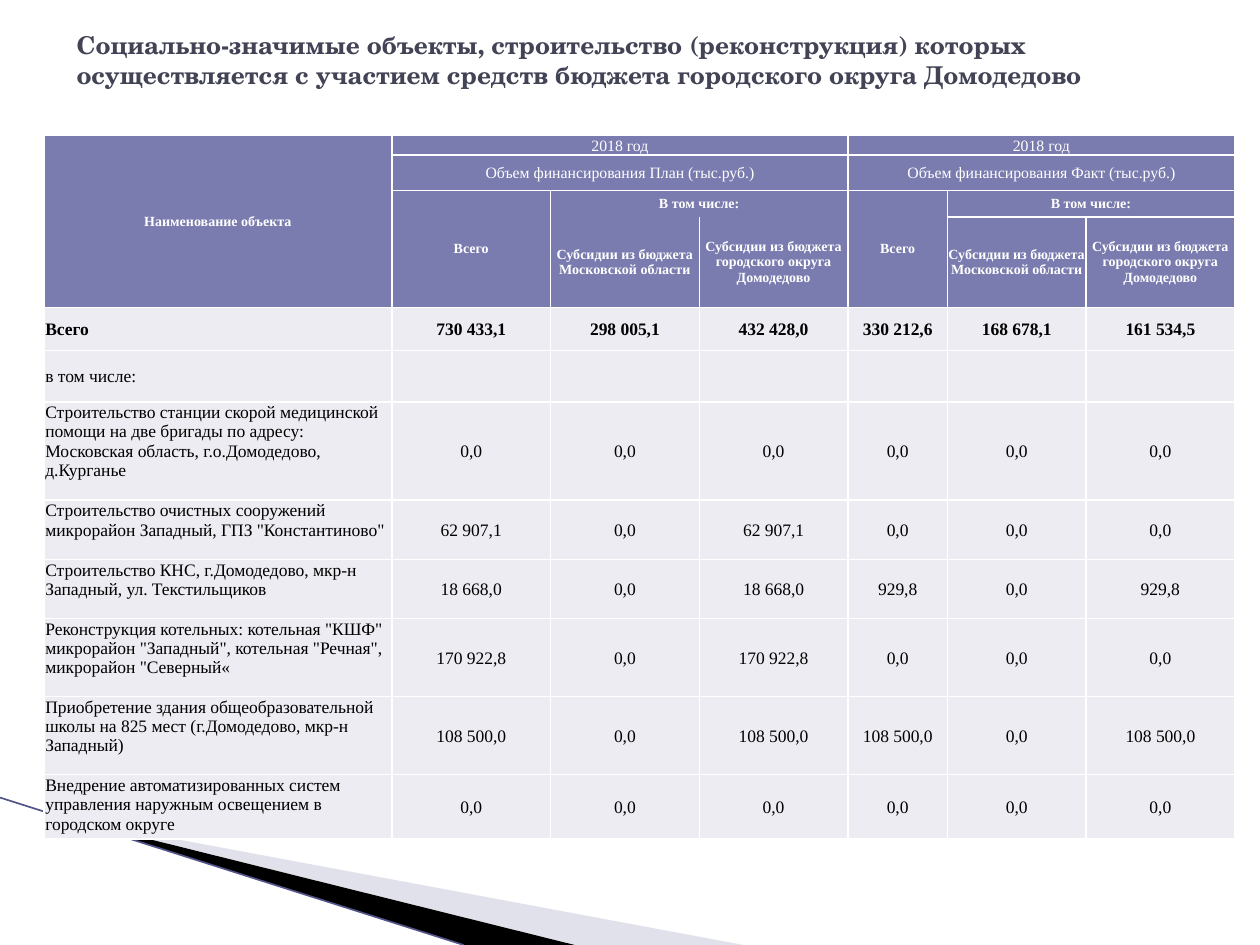
from lxml import etree
from pptx import Presentation
from pptx.dml.color import RGBColor
from pptx.enum.shapes import MSO_CONNECTOR
from pptx.enum.text import MSO_ANCHOR, PP_ALIGN
from pptx.oxml.ns import qn
from pptx.util import Emu, Pt

LEFT, CENTER = PP_ALIGN.LEFT, PP_ALIGN.CENTER
TOP, MIDDLE, BOTTOM = MSO_ANCHOR.TOP, MSO_ANCHOR.MIDDLE, MSO_ANCHOR.BOTTOM
STRAIGHT = MSO_CONNECTOR.STRAIGHT

GRID_COLUMNS, GRID_ROWS, UNIT = 1000, 750, 9144
TABLE_FONT, TITLE_FONT = "Times New Roman", "TeX Gyre Schola"
HEADER_FILL, BODY_FILL, WHITE, BLACK = "7A7BAE", "ECECF2", "FFFFFF", "000000"

TITLE = ("Cоциально-значимые объекты, строительство (реконструкция) которых "
         "осуществляется с участием средств бюджета городского округа Домодедово")
COLUMN_WIDTHS = [276, 126, 118, 118, 79, 110, 118]
ROW_HEIGHTS = [15, 28, 21, 0, 72, 34, 41, 78, 47, 47, 62, 62, 47]
REGION = "Субсидии из бюджета Московской области"
DISTRICT = "Субсидии из бюджета городского округа Домодедово"
YEAR_STYLE = {"size": 9, "anchor": BOTTOM}
VOLUME_STYLE = {"size": 9}
LABEL_STYLE = {"size": 8, "bold": True}
HEADERS = [
    (0, 0, 5, 1, "Наименование объекта", LABEL_STYLE),
    (0, 1, 1, 3, "2018 год", YEAR_STYLE),
    (0, 4, 1, 3, "2018 год", YEAR_STYLE),
    (1, 1, 1, 3, "Объем финансирования План (тыс.руб.)", VOLUME_STYLE),
    (1, 4, 1, 3, "Объем финансирования Факт (тыс.руб.)", VOLUME_STYLE),
    (2, 1, 3, 1, "Всего", LABEL_STYLE),
    (2, 2, 1, 2, "В том числе:", LABEL_STYLE),
    (2, 4, 3, 1, "Всего", LABEL_STYLE),
    (2, 5, 2, 2, "В том числе:", LABEL_STYLE),
    (3, 2, 2, 1, REGION, LABEL_STYLE),
    (3, 3, 2, 1, DISTRICT, LABEL_STYLE),
    (4, 5, 1, 1, REGION, LABEL_STYLE),
    (4, 6, 1, 1, DISTRICT, LABEL_STYLE),
]
HEADER_ROWS = 5
OPEN_EDGES = {(row, column, edge) for column in (2, 3)
              for row, edge in ((2, "B"), (3, "T"))}
ZEROS = ["0,0"] * 6
BODY = [
    ("Всего", ["730 433,1", "298 005,1", "432 428,0",
               "330 212,6", "168 678,1", "161 534,5"]),
    ("в том числе:", [""] * 6),
    ("Строительство станции скорой медицинской помощи на две бригады по адресу: "
     "Московская область, г.о.Домодедово, д.Курганье", ZEROS),
    ('Строительство очистных сооружений микрорайон Западный, ГПЗ "Константиново"',
     ["62 907,1", "0,0", "62 907,1", "0,0", "0,0", "0,0"]),
    ("Строительство КНС, г.Домодедово, мкр-н Западный, ул. Текстильщиков",
     ["18 668,0", "0,0", "18 668,0", "929,8", "0,0", "929,8"]),
    ('Реконструкция котельных: котельная "КШФ" микрорайон "Западный", '
     'котельная "Речная", микрорайон "Северный«',
     ["170 922,8", "0,0", "170 922,8", "0,0", "0,0", "0,0"]),
    ("Приобретение здания общеобразовательной школы на 825 мест "
     "(г.Домодедово, мкр-н Западный)",
     ["108 500,0", "0,0", "108 500,0", "108 500,0", "0,0", "108 500,0"]),
    ("Внедрение автоматизированных систем управления наружным освещением "
     "в городском округе", ZEROS),
]


def grid(*counts):
    return [Emu(round(count * UNIT)) for count in counts]


def color(value):
    return RGBColor.from_string(value)


def write(frame, text, *, font=TABLE_FONT, size=10, bold=False, ink=BLACK, align=LEFT):
    para = frame.paragraphs[0]
    para.alignment = align
    para.font.size = Pt(size)
    if text:
        span = para.add_run()
        span.text = text
        span.font.name = font
        span.font.size = Pt(size)
        span.font.bold = bold
        span.font.color.rgb = color(ink)


def add_wedge(page, points, fill, opacity=100):
    builder = page.shapes.build_freeform(*points[0], scale=UNIT)
    builder.add_line_segments(points[1:], close=True)
    wedge = builder.convert_to_shape()
    wedge.shadow.inherit = False
    wedge.line.fill.background()
    wedge.fill.solid()
    wedge.fill.fore_color.rgb = color(fill)
    if opacity < 100:
        tint = wedge.fill._xPr.find(qn("a:solidFill"))[0]
        etree.SubElement(tint, qn("a:alpha"), val=str(opacity * 1000))


def add_corner(page, box):
    left, top, width, height = box
    right, bottom = left + width, top + height
    tip = (left + 54, top + 17)
    add_wedge(page, [tip, (right, bottom), (left + 456, bottom)], "B6B6D1", 40)
    add_wedge(page, [tip, (left + 456, bottom), (left + 368, bottom)], BLACK)
    edge = page.shapes.add_connector(
        STRAIGHT, *grid(left, top, left + 368, bottom))
    edge.line.color.rgb = color("53548A")
    edge.line.width = Pt(0.95)
    etree.SubElement(edge._element.spPr, qn("a:effectLst"))


def add_title(page, box):
    frame = page.shapes.add_textbox(*grid(*box)).text_frame
    frame.word_wrap = True
    frame.vertical_anchor = MIDDLE
    write(frame, TITLE, font=TITLE_FONT, size=14, bold=True, ink="424456")


def add_borders(cell, row, column):
    properties = cell._tc.get_or_add_tcPr()
    for position, edge in enumerate("LRTB"):
        line = etree.Element(qn(f"a:ln{edge}"), w=str(Pt(1)))
        if (row, column, edge) in OPEN_EDGES:
            etree.SubElement(line, qn("a:noFill"))
        else:
            paint = etree.SubElement(line, qn("a:solidFill"))
            etree.SubElement(paint, qn("a:srgbClr"), val=WHITE)
        properties.insert(position, line)


def style_cell(cell, row, column):
    cell.margin_left, cell.margin_right, cell.margin_top, cell.margin_bottom = (
        grid(0, 0, 0, 0) if row in range(2, HEADER_ROWS) or (row, column) == (0, 0)
        else grid(1, 1, 1, 0))
    cell.vertical_anchor = MIDDLE
    cell.fill.solid()
    cell.fill.fore_color.rgb = color(HEADER_FILL if row < HEADER_ROWS else BODY_FILL)
    add_borders(cell, row, column)


def add_budget_table(page, box):
    table = page.shapes.add_table(
        len(ROW_HEIGHTS), len(COLUMN_WIDTHS), *grid(*box)).table
    table.first_row = table.horz_banding = False
    for column, width in zip(table.columns, grid(*COLUMN_WIDTHS)):
        column.width = width
    for row, height in zip(table.rows, grid(*ROW_HEIGHTS)):
        row.height = height
    for row in range(len(ROW_HEIGHTS)):
        for column in range(len(COLUMN_WIDTHS)):
            style_cell(table.cell(row, column), row, column)
    for row, column, height, width, text, style in HEADERS:
        cell = table.cell(row, column)
        if height * width > 1:
            cell.merge(table.cell(row + height - 1, column + width - 1))
        cell.vertical_anchor = style.get("anchor", MIDDLE)
        write(cell.text_frame, text, size=style["size"],
              bold=style.get("bold", False), ink=WHITE, align=CENTER)
    for row, (name, values) in enumerate(BODY, HEADER_ROWS):
        total = row == HEADER_ROWS
        for column, text in enumerate([name, *values]):
            write(table.cell(row, column).text_frame, text, bold=total,
                  align=CENTER if column else LEFT)
        if row > HEADER_ROWS + 1:
            table.cell(row, 0).vertical_anchor = TOP


def main():
    deck = Presentation()
    deck.slide_width, deck.slide_height = grid(GRID_COLUMNS, GRID_ROWS)
    page = deck.slides.add_slide(deck.slide_layouts[6])
    add_corner(page, (0, 633, 590, 117))
    add_title(page, (51, 13, 900, 69))
    add_budget_table(page, (35, 107, sum(COLUMN_WIDTHS), sum(ROW_HEIGHTS)))
    deck.save("out.pptx")


if __name__ == "__main__":
    main()
